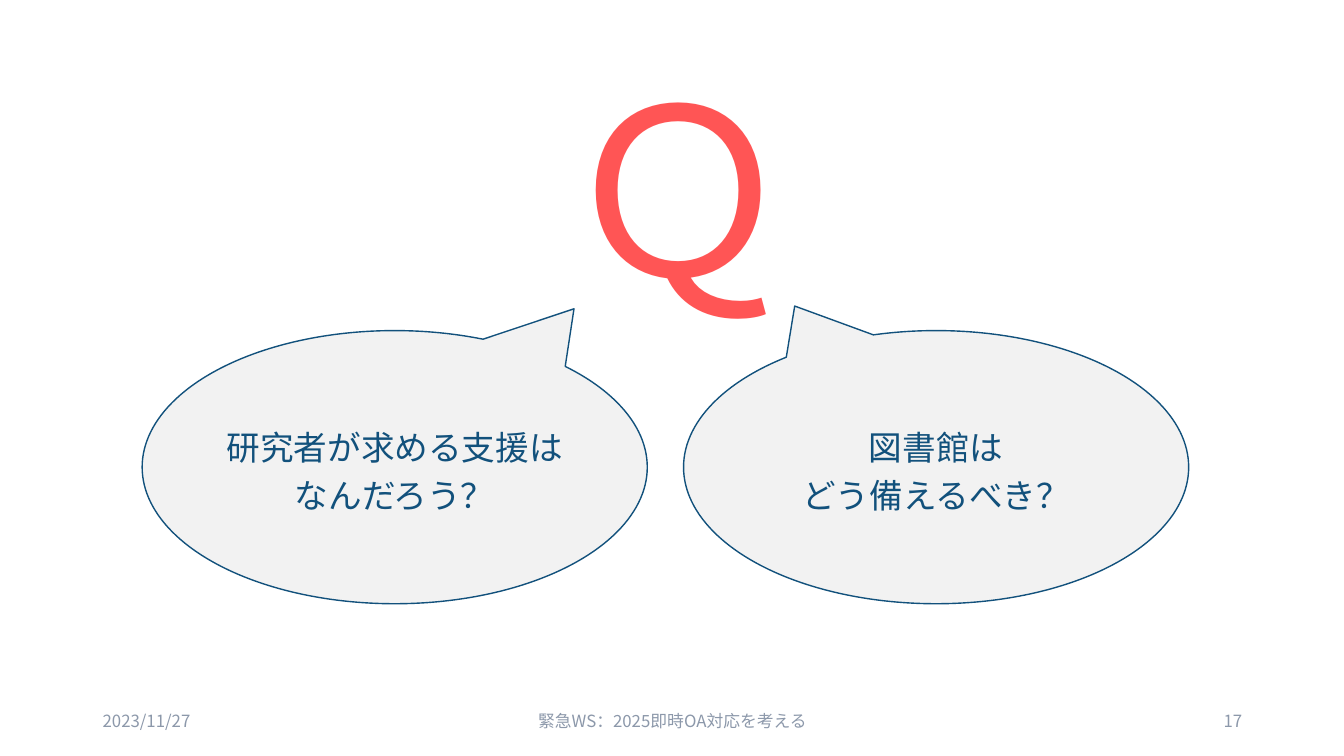
from pptx import Presentation
from pptx.dml.color import RGBColor as Rgb
from pptx.enum.shapes import MSO_SHAPE as Kind
from pptx.enum.text import MSO_ANCHOR as Anchor, MSO_AUTO_SIZE as Auto, PP_ALIGN as Align
from pptx.oxml.ns import qn
from pptx.util import Pt
from lxml.etree import SubElement

PX = 9144
FONT = "Noto Sans CJK JP"
HUES = {"navy": "12517C", "red": "FF5555", "pale": "F2F2F2", "gray": "8C98AA"}


def hue(name):
    return Rgb.from_string(HUES[name])


def write(frame, lines, size, color, **form):
    for i, line in enumerate(lines):
        para = frame.paragraphs[0] if i == 0 else frame.add_paragraph()
        for key, val in form.items():
            setattr(para, key, val)
        run = para.add_run()
        run.text = line
        run.font.size = Pt(size)
        run.font.name = FONT
        run.font.color.rgb = hue(color)
        SubElement(run.font._element, qn("a:ea"), typeface=FONT)


deck = Presentation()
deck.slide_width, deck.slide_height = 1333 * PX, 750 * PX
slide = deck.slides.add_slide(deck.slide_layouts[6])
shapes = slide.shapes

footer = [
    (92, 300, "2023/11/27", Align.LEFT),
    (442, 450, "緊急WS：2025即時OA対応を考える", Align.CENTER),
    (942, 300, "17", Align.RIGHT),
]
for left, width, text, align in footer:
    box = shapes.add_textbox(left * PX, 695 * PX, width * PX, 40 * PX)
    frame = box.text_frame
    frame.word_wrap = True
    frame.vertical_anchor = Anchor.MIDDLE
    write(frame, [text], 12, "gray", alignment=align)

mark = shapes.add_textbox(548 * PX, 39 * PX, 227 * PX, 289 * PX)
mark.text_frame.word_wrap = False
mark.text_frame.auto_size = Auto.SHAPE_TO_FIT_TEXT
write(mark.text_frame, ["Ｑ"], 166, "red", space_before=Pt(6))

bubbles = [
    (678, (-0.28, -0.59), ["図書館は", "どう備えるべき？"]),
    (141, (0.355, -0.58), ["研究者が求める支援はなんだろう？"]),
]
for left, tip, lines in bubbles:
    bubble = shapes.add_shape(Kind.OVAL_CALLOUT, left * PX, 328 * PX, 501 * PX, 271 * PX)
    bubble.shadow.inherit = False
    bubble.adjustments[0], bubble.adjustments[1] = tip
    bubble.fill.solid()
    bubble.fill.fore_color.rgb = hue("pale")
    bubble.line.color.rgb = hue("navy")
    bubble.line.width = Pt(1)
    frame = bubble.text_frame
    frame.word_wrap = True
    frame.vertical_anchor = Anchor.MIDDLE
    write(frame, lines, 24, "navy", alignment=Align.CENTER, line_spacing=1.2)

deck.save("out.pptx")
